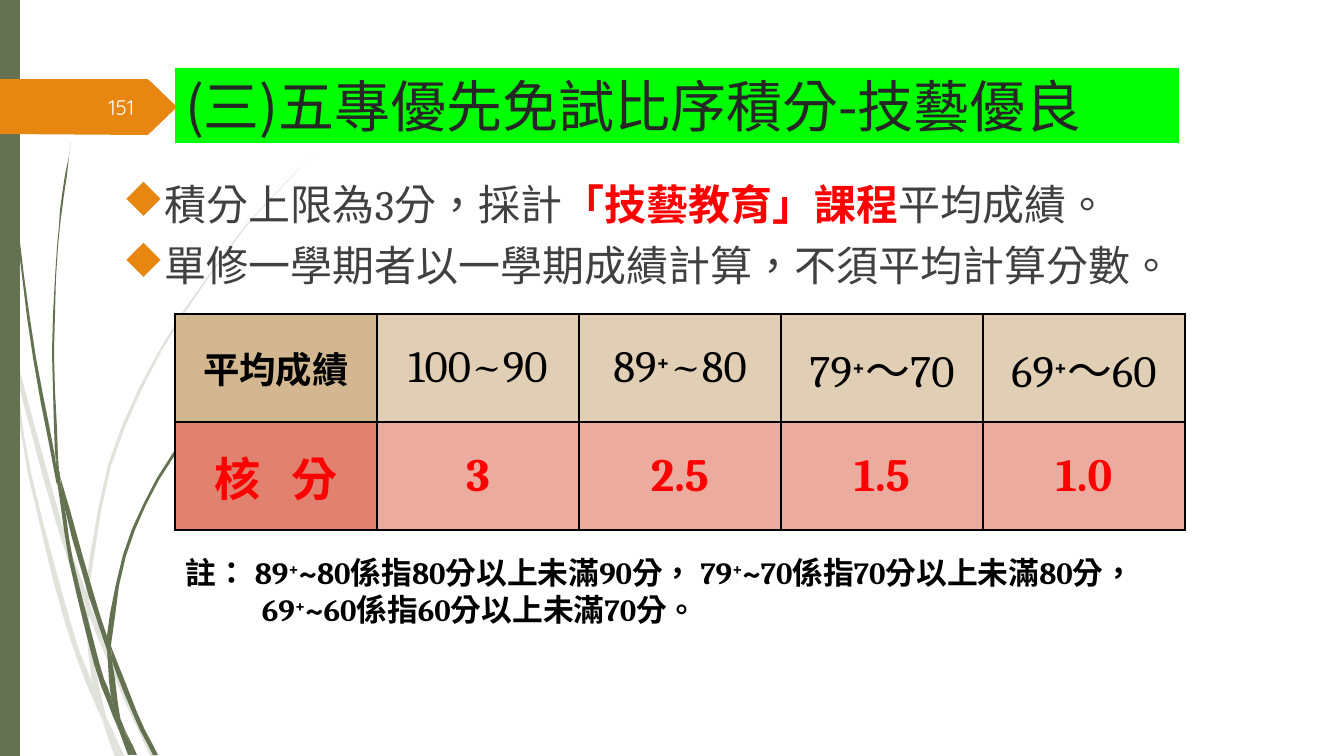
from lxml import etree
from pptx import Presentation
from pptx import util as u
from pptx.dml.color import RGBColor
from pptx.enum import shapes, text
from pptx.oxml import ns

SCALE = 9071.43
GREEN = RGBColor(0x64, 0x72, 0x52)
PALE_GREEN = RGBColor(0xE0, 0xE3, 0xDC)
ORANGE = RGBColor(0xE7, 0x87, 0x12)
LIME = RGBColor(0x00, 0xFF, 0x00)
RED = RGBColor(0xFF, 0x00, 0x00)
BLACK = RGBColor(0x00, 0x00, 0x00)
TITLE_GRAY = RGBColor(0x26, 0x26, 0x26)
BODY_GRAY = RGBColor(0x40, 0x40, 0x40)
NEAR_WHITE = RGBColor(0xFE, 0xFF, 0xFF)
ROW_FILLS = [(RGBColor(0xD2, 0xB7, 0x90), RGBColor(0xE1, 0xCF, 0xB5)),
             (RGBColor(0xE1, 0x81, 0x6F), RGBColor(0xEB, 0xAB, 0x9F))]
SANS, SERIF, NUMERAL = "Noto Sans CJK SC", "Cambria", "Quicksand"

TITLE = "(三)五專優先免試比序積分-技藝優良"
PAGE = "151"
BULLETS = [
    [("積分上限為", SANS, BODY_GRAY, False), ("3", SERIF, BODY_GRAY, False),
     ("分，採計", SANS, BODY_GRAY, False), ("「技藝教育」課程", SANS, RED, True),
     ("平均成績。", SANS, BODY_GRAY, False)],
    [("單修一學期者以一學期成績計算，不須平均計算分數。", SANS, BODY_GRAY, False)],
]
SCORES = [["平均成績", "100~90", "89+~80", "79+～70", "69+～60"],
          ["核   分", "3", "2.5", "1.5", "1.0"]]
NOTE = "註：\t89+~80係指80分以上未滿90分， 79+~70係指70分以上未滿80分， 69+~60係指60分以上未滿70分。"

TAG = [(0, 79), (147, 79), (149, 80), (175, 105), (175, 109), (149, 134), (147, 135), (0, 134)]
PALE_BLADES = [
    ([(11, 353), (8, 325), (0, 284)], [(0, 301), (10, 347)]),
    ([(14, 348), (62, 524), (86, 591)], [(85, 604), (57, 526), (17, 379)]),
    ([(89, 601), (93, 612), (128, 698), (156, 757)], [(151, 757), (124, 700), (89, 615)]),
    ([(106, 717), (125, 757)], [(120, 757)]),
    ([(11, 353), (17, 379), (31, 473), (71, 624), (94, 688), (102, 720)],
     [(93, 699), (66, 626), (28, 474), (11, 353)]),
    ([(85, 604), (88, 651), (94, 688), (106, 717)], [(105, 712), (92, 651), (89, 615)]),
    ([(314, 154), (270, 199), (230, 246), (159, 351), (108, 465), (86, 589), (89, 601)],
     [(89, 589), (111, 466), (161, 352), (231, 247), (270, 200), (314, 154)]),
    ([(102, 720), (115, 757)], [(120, 757)]),
    ([(89, 615), (89, 601)], [(86, 591), (85, 604)]),
    ([(94, 688), (100, 713), (120, 757)], [(106, 717)]),
]
DARK_BLADES = [
    ([(3, 0), (8, 110), (19, 234), (36, 358), (55, 457), (57, 485)],
     [(56, 481), (33, 358), (17, 235), (7, 111), (3, 48)]),
    ([(60, 476), (94, 595), (107, 636), (107, 650)], [(89, 597), (65, 509), (60, 476)]),
    ([(111, 646), (137, 712), (158, 755)], [(153, 755), (133, 714), (112, 661)]),
    ([(57, 481), (65, 509), (73, 560), (99, 662), (111, 697), (118, 728)],
     [(112, 714), (94, 664), (69, 561), (57, 481)]),
    ([(71, 142), (64, 195), (58, 247), (54, 352), (58, 457), (60, 476)],
     [(55, 453), (52, 352), (57, 247), (62, 195), (71, 142)]),
    ([(123, 725), (137, 755)], [(134, 755)]),
    ([(55, 453), (57, 481)], [(65, 509), (60, 476)]),
    ([(262, 347), (233, 376), (206, 408), (157, 478), (123, 555), (107, 636), (111, 646)],
     [(112, 638), (126, 556), (159, 480), (207, 409), (233, 377), (262, 347)]),
    ([(118, 728), (128, 755)], [(132, 755)]),
    ([(107, 650), (111, 697), (123, 725)], [(121, 722), (112, 661)]),
    ([(107, 650), (107, 636)], [(111, 646), (112, 661)]),
    ([(111, 697), (118, 728), (132, 755)], [(134, 755), (123, 725)]),
]


def box(*lengths):
    return [round(length * SCALE) for length in lengths]


def smooth(points, steps=3):
    padded = [points[0], *points, points[-1]]
    curve = [points[0]]
    for a, b, c, d in zip(padded, padded[1:], padded[2:], padded[3:]):
        for t in (step / steps for step in range(1, steps + 1)):
            curve.append([(2 * q + (r - p) * t + (2 * p - 5 * q + 4 * r - s) * t ** 2
                           + (3 * q - p - 3 * r + s) * t ** 3) / 2
                          for p, q, r, s in zip(a, b, c, d)])
    return curve


def paint(shape, color):
    shape.shadow.inherit = False
    shape.fill.solid()
    shape.fill.fore_color.rgb = color
    shape.line.fill.background()


def add_outline(slide, points, color):
    builder = slide.shapes.build_freeform(*points[0], scale=SCALE)
    builder.add_line_segments(points[1:], close=True)
    paint(builder.convert_to_shape(), color)


def add_run(paragraph, words, size, font, color, bold=False, raised=False):
    run = paragraph.add_run()
    run.text = words
    run.font.size, run.font.bold, run.font.name = u.Pt(size), bold, font
    run.font.color.rgb = color
    properties = run.font._element
    properties.set("lang", "zh-TW")
    etree.SubElement(properties, ns.qn("a:ea")).set("typeface", SANS)
    if raised:
        properties.set("baseline", "30000")


def add_score_text(paragraph, words, size, plus_size, font, color, bold):
    for index, part in enumerate(words.split("+")):
        if index:
            add_run(paragraph, "+", plus_size, font, color, True, True)
        add_run(paragraph, part, size, font, color, bold)


def hang(paragraph, indent, bullet=None):
    properties = paragraph._p.get_or_add_pPr()
    properties.set("marL", str(box(indent)[0]))
    properties.set("indent", str(-box(indent)[0]))
    if bullet:
        color = etree.SubElement(properties, ns.qn("a:buClr"))
        etree.SubElement(color, ns.qn("a:srgbClr")).set("val", str(ORANGE))
        etree.SubElement(properties, ns.qn("a:buFont")).set("typeface", "Wingdings")
        etree.SubElement(properties, ns.qn("a:buChar")).set("char", bullet)


def outline_cell(cell):
    for index, side in enumerate(("a:lnL", "a:lnR", "a:lnT", "a:lnB")):
        line = etree.Element(ns.qn(side), w=str(u.Pt(0.9)))
        fill = etree.SubElement(line, ns.qn("a:solidFill"))
        etree.SubElement(fill, ns.qn("a:srgbClr")).set("val", str(BLACK))
        cell._tc.get_or_add_tcPr().insert(index, line)


def add_text_box(slide, *lengths):
    frame = slide.shapes.add_textbox(*box(*lengths)).text_frame
    frame.word_wrap = True
    return frame


def add_scores(slide):
    table = slide.shapes.add_table(2, 5, *box(175, 314, 1010, 216)).table
    for row, values in enumerate(SCORES):
        for column, value in enumerate(values):
            cell = table.cell(row, column)
            cell.fill.solid()
            cell.fill.fore_color.rgb = ROW_FILLS[row][column > 0]
            cell.vertical_anchor = text.MSO_ANCHOR.MIDDLE
            outline_cell(cell)
            paragraph = cell.text_frame.paragraphs[0]
            paragraph.alignment = text.PP_ALIGN.CENTER
            size = 33 if row else 32 if column else 26
            add_score_text(paragraph, value, size, 28, SERIF if column or row else SANS,
                           RED if row else BLACK, bool(row or not column))


presentation = Presentation()
presentation.slide_width, presentation.slide_height = box(1344, 756)
slide = presentation.slides.add_slide(presentation.slide_layouts[5])
for color, blades in ((PALE_GREEN, PALE_BLADES), (GREEN, DARK_BLADES)):
    for outward, back in blades:
        add_outline(slide, smooth(outward) + smooth(back), color)
paint(slide.shapes.add_shape(shapes.MSO_SHAPE.RECTANGLE, *box(0, 0, 20, 756)), GREEN)
add_outline(slide, TAG, ORANGE)

body = add_text_box(slide, 113, 174, 1203, 148)
for index, runs in enumerate(BULLETS):
    paragraph = body.add_paragraph() if index else body.paragraphs[0]
    hang(paragraph, 28, "u")
    if index:
        paragraph.space_before = u.Pt(7.5)
    for words, font, color, bold in runs:
        add_run(paragraph, words, 30, font, color, bold)
add_scores(slide)
note = add_text_box(slide, 176, 549, 966, 85).paragraphs[0]
hang(note, 69)
add_score_text(note, NOTE, 22, 22, SERIF, BLACK, True)

title = slide.shapes.title
title.left, title.top, title.width, title.height = box(175, 68, 1004, 75)
title.fill.solid()
title.fill.fore_color.rgb = LIME
title.text_frame.vertical_anchor = text.MSO_ANCHOR.MIDDLE
title.text_frame.paragraphs[0].alignment = text.PP_ALIGN.LEFT
add_run(title.text_frame.paragraphs[0], TITLE, 40, SANS, TITLE_GRAY)
number = add_text_box(slide, 58, 87, 86, 40)
number.vertical_anchor = text.MSO_ANCHOR.MIDDLE
number.paragraphs[0].alignment = text.PP_ALIGN.RIGHT
add_run(number.paragraphs[0], PAGE, 15, NUMERAL, NEAR_WHITE)
presentation.save("out.pptx")
